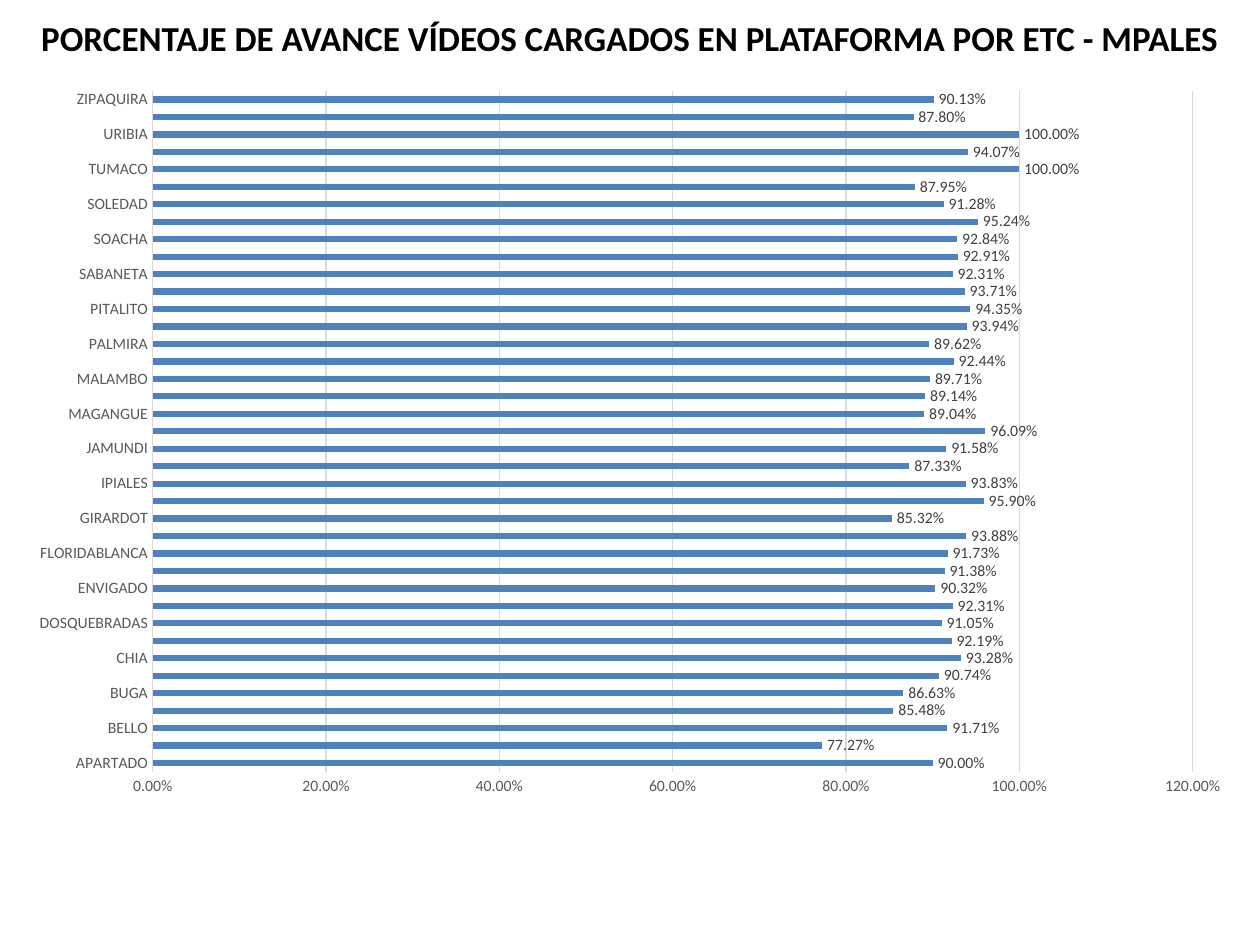
from dataclasses import dataclass
from typing import Any

from pptx import Presentation
from pptx.chart import data
from pptx.dml import color
from pptx.enum import chart as charts, shapes, text
from pptx.util import Inches, Pt

WIDTH, HEIGHT = Inches(10), Inches(7.5)
PERCENT = "0.00%"
GRID_GREY = "D9D9D9"


@dataclass(frozen=True)
class Area:
    left: float
    top: float
    width: float
    height: float

    def lengths(self) -> tuple[int, ...]:
        return (
            round(self.left * WIDTH),
            round(self.top * HEIGHT),
            round(self.width * WIDTH),
            round(self.height * HEIGHT),
        )


@dataclass(frozen=True)
class Progress:
    town: str
    percent: float


TOWNS = [
    Progress("APARTADO", 90),
    Progress("BARRANCABERMEJA", 77.27),
    Progress("BELLO", 91.71),
    Progress("BUENAVENTURA", 85.48),
    Progress("BUGA", 86.63),
    Progress("CARTAGO", 90.74),
    Progress("CHIA", 93.28),
    Progress("CIENAGA", 92.19),
    Progress("DOSQUEBRADAS", 91.05),
    Progress("DUITAMA", 92.31),
    Progress("ENVIGADO", 90.32),
    Progress("FACATATIVA", 91.38),
    Progress("FLORIDABLANCA", 91.73),
    Progress("FUSAGASUGA", 93.88),
    Progress("GIRARDOT", 85.32),
    Progress("GIRON", 95.9),
    Progress("IPIALES", 93.83),
    Progress("ITAGUI", 87.33),
    Progress("JAMUNDI", 91.58),
    Progress("LORICA", 96.09),
    Progress("MAGANGUE", 89.04),
    Progress("MAICAO", 89.14),
    Progress("MALAMBO", 89.71),
    Progress("MOSQUERA", 92.44),
    Progress("PALMIRA", 89.62),
    Progress("PIEDECUESTA", 93.94),
    Progress("PITALITO", 94.35),
    Progress("RIONEGRO", 93.71),
    Progress("SABANETA", 92.31),
    Progress("SAHAGUN", 92.91),
    Progress("SOACHA", 92.84),
    Progress("SOGAMOSO", 95.24),
    Progress("SOLEDAD", 91.28),
    Progress("TULUA", 87.95),
    Progress("TUMACO", 100),
    Progress("TURBO", 94.07),
    Progress("URIBIA", 100),
    Progress("YUMBO", 87.8),
    Progress("ZIPAQUIRA", 90.13),
]


def rgb(value: str) -> color.RGBColor:
    return color.RGBColor.from_string(value)


def apply(target: Any, values: dict[str, Any]) -> None:
    for name, value in values.items():
        setattr(target, name, value)


def style_font(font: Any, size: float, shade: str, bold: bool = False) -> None:
    apply(font, {"name": "Calibri", "size": Pt(size), "bold": bold})
    font.color.rgb = rgb(shade)


def style_line(line: Any, shade: str) -> None:
    line.color.rgb = rgb(shade)
    line.width = Pt(0.75)


def add_title(page: Any, area: Area, wording: str) -> None:
    box = page.shapes.add_shape(
        shapes.MSO_SHAPE.ROUND_2_DIAG_RECTANGLE, *area.lengths()
    )
    box.shadow.inherit = False
    box.fill.solid()
    box.fill.fore_color.rgb = rgb("FFFFFF")
    box.line.fill.background()
    frame = box.text_frame
    apply(frame, {
        "word_wrap": True,
        "vertical_anchor": text.MSO_ANCHOR.MIDDLE,
        "margin_left": 0,
        "margin_right": 0,
        "margin_top": 0,
        "margin_bottom": 0,
    })
    para = frame.paragraphs[0]
    para.alignment = text.PP_ALIGN.CENTER
    span = para.add_run()
    span.text = wording
    style_font(span.font, 20, "000000", bold=True)


def add_progress_chart(page: Any, area: Area, towns: list[Progress]) -> None:
    source = data.CategoryChartData(number_format=PERCENT)
    source.categories = [item.town for item in towns]
    source.add_series("Series 1", [round(item.percent / 100, 4) for item in towns])
    chart = page.shapes.add_chart(
        charts.XL_CHART_TYPE.BAR_CLUSTERED, *area.lengths(), source
    ).chart
    apply(chart, {"has_legend": False, "has_title": False})
    style_font(chart.font, 10, "000000")

    for axis in (chart.category_axis, chart.value_axis):
        apply(axis, {
            "major_tick_mark": charts.XL_TICK_MARK.NONE,
            "minor_tick_mark": charts.XL_TICK_MARK.NONE,
        })
        style_font(axis.tick_labels.font, 9, "595959")
    style_line(chart.category_axis.format.line, GRID_GREY)
    scale = chart.value_axis
    apply(scale, {
        "minimum_scale": 0,
        "maximum_scale": 1.2,
        "major_unit": 0.2,
        "has_major_gridlines": True,
    })
    scale.format.line.fill.background()
    style_line(scale.major_gridlines.format.line, GRID_GREY)

    plot = chart.plots[0]
    apply(plot, {"gap_width": 182, "vary_by_categories": False, "has_data_labels": True})
    fill = plot.series[0].format.fill
    fill.solid()
    fill.fore_color.rgb = rgb("4F81BD")
    labels = plot.data_labels
    apply(labels, {
        "show_value": True,
        "position": charts.XL_LABEL_POSITION.OUTSIDE_END,
    })
    style_font(labels.font, 9, "404040")
    for numbers in (labels, scale.tick_labels):
        apply(numbers, {"number_format": PERCENT, "number_format_is_linked": False})


def main() -> None:
    deck = Presentation()
    apply(deck, {"slide_width": WIDTH, "slide_height": HEIGHT})
    page = deck.slides.add_slide(deck.slide_layouts[6])
    add_title(
        page,
        Area(0, 0.01, 1, 0.06),
        "PORCENTAJE DE AVANCE VÍDEOS CARGADOS EN PLATAFORMA POR ETC - MPALES",
    )
    add_progress_chart(page, Area(0.012, 0.08, 0.976, 0.777), TOWNS)
    deck.save("out.pptx")


if __name__ == "__main__":
    main()
